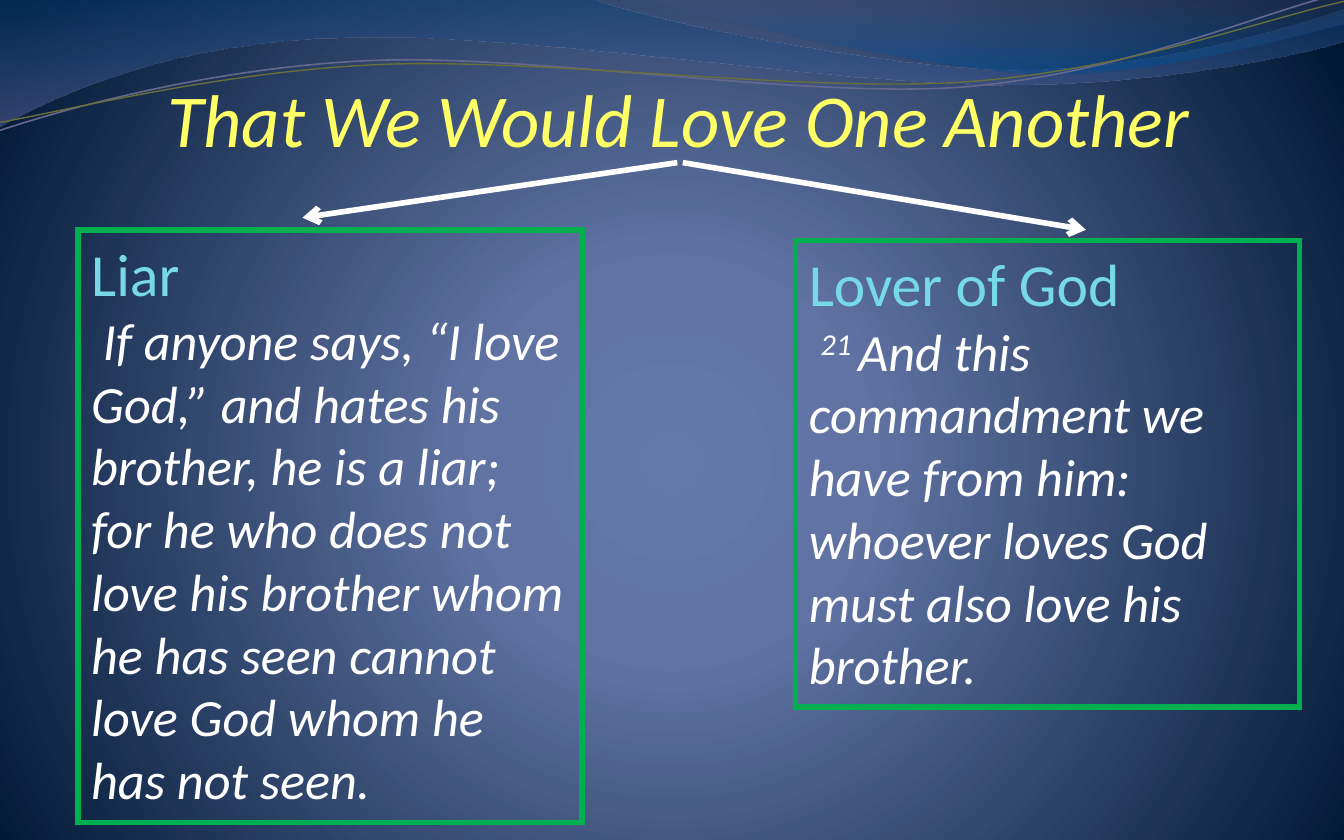
from math import cos, radians, sin

from pptx import Presentation
from pptx.dml.color import RGBColor
from pptx.enum.shapes import MSO_CONNECTOR, MSO_SHAPE
from pptx.enum.text import MSO_ANCHOR, MSO_AUTO_SIZE, PP_ALIGN
from pptx.oxml import parse_xml
from pptx.oxml.ns import nsdecls, qn
from pptx.util import Inches, Pt

RECTANGLE = MSO_SHAPE.RECTANGLE
STRAIGHT = MSO_CONNECTOR.STRAIGHT
LEFT, CENTER = PP_ALIGN.LEFT, PP_ALIGN.CENTER
TOP, BOTTOM = MSO_ANCHOR.TOP, MSO_ANCHOR.BOTTOM
GROW = MSO_AUTO_SIZE.SHAPE_TO_FIT_TEXT

COLORS = {
    "title": "FFFF66", "heading": "77D9E8", "white": "FFFFFF", "frame": "00B050",
    "glow": "6379AE", "mid": "6073A3", "night": "001733",
    "wave_blue": "074278", "wave_violet": "5C629D",
    "crest_violet": "4F537B", "crest_blue": "004F98",
    "violet_line": "65688D", "olive_line": "686F3A",
}
RADIAL = '<a:path path="circle"><a:fillToRect l="10000" t="110000" r="10000" b="100000"/></a:path>'
DOWNWARD = '<a:lin ang="5400000" scaled="0"/>'
TILT = 2.7


def turn(point, center, degrees):
    """Turn a point clockwise around a center."""
    dx, dy = point[0] - center[0], point[1] - center[1]
    c, s = cos(radians(degrees)), sin(radians(degrees))
    return center[0] + dx * c - dy * s, center[1] + dx * s + dy * c


class SlideWriter:
    font = "Calibri"

    def __init__(self, page):
        self.page = page

    def color(self, name):
        return RGBColor.from_string(COLORS[name])

    def gradient(self, fill, owner, stops, direction):
        """Stops are (position %, colour name, opacity %)."""
        fill.gradient()
        stop_xml = ""
        for pos, name, opacity in stops:
            alpha = f'<a:alpha val="{opacity * 1000}"/>' if opacity < 100 else ""
            stop_xml += (f'<a:gs pos="{pos * 1000}"><a:srgbClr val="{COLORS[name]}">'
                         f'{alpha}</a:srgbClr></a:gs>')
        old = owner.find(".//" + qn("a:gradFill"))
        old.getparent().replace(old, parse_xml(
            f'<a:gradFill {nsdecls("a")} rotWithShape="1">'
            f'<a:gsLst>{stop_xml}</a:gsLst>{direction}</a:gradFill>'))

    def background(self, stops):
        self.gradient(self.page.background.fill, self.page.element, stops, RADIAL)

    def stroke(self, line, name, width):
        line.color.rgb = self.color(name)
        line.width = Pt(width)

    def outline(self, start, segments, closed):
        """A segment has one point for a line, three for a cubic curve."""
        points = [(Inches(x), Inches(y)) for segment in segments for x, y in segment]
        builder = self.page.shapes.build_freeform(Inches(start[0]), Inches(start[1]))
        builder.add_line_segments(points, close=closed)
        shape = builder.convert_to_shape()
        shape.shadow.inherit = False
        # Join each three line ends into one curve
        steps = iter(shape.element.findall(".//" + qn("a:lnTo")))
        for segment in segments:
            ends = [next(steps) for _ in segment]
            if len(ends) == 3:
                curve = parse_xml(f'<a:cubicBezTo {nsdecls("a")}/>')
                ends[0].addprevious(curve)
                for end in ends:
                    curve.append(end[0])
                    end.getparent().remove(end)
        return shape

    def wave(self, start, segments, stops):
        shape = self.outline(start, segments, True)
        self.gradient(shape.fill, shape.element, stops, DOWNWARD)
        shape.line.fill.background()

    def ripple(self, center, start, segments, name, width):
        """An open curve, laid level and then tilted into place."""
        level = [[turn(point, center, TILT) for point in segment] for segment in segments]
        shape = self.outline(turn(start, center, TILT), level, False)
        shape.rotation = 360 - TILT
        shape.fill.background()
        self.stroke(shape.line, name, width)

    def span(self, para, text, size, name, italic=False, baseline=None):
        span = para.add_run()
        span.text = text
        span.font.name = self.font
        span.font.size = Pt(size)
        span.font.italic = italic
        span.font.color.rgb = self.color(name)
        if baseline:
            span.font._element.set("baseline", str(baseline * 1000))

    def title(self, left, top, width, height, text):
        box = self.page.shapes.add_textbox(*map(Inches, (left, top, width, height)))
        frame = box.text_frame
        frame.word_wrap = True
        frame.vertical_anchor = BOTTOM
        frame.margin_left = frame.margin_right = frame.margin_bottom = 0
        para = frame.paragraphs[0]
        para.alignment = CENTER
        self.span(para, text, 40, "title", italic=True)

    def verse_box(self, left, top, width, height, heading, verse):
        """Verse is a list of (text, baseline %)."""
        box = self.page.shapes.add_shape(RECTANGLE, *map(Inches, (left, top, width, height)))
        box.shadow.inherit = False
        box.fill.background()
        self.stroke(box.line, "frame", 3)
        box.line._get_or_add_ln().append(
            parse_xml(f'<a:miter {nsdecls("a")} lim="800000"/>'))
        frame = box.text_frame
        frame.word_wrap = True
        frame.auto_size = GROW
        frame.vertical_anchor = TOP
        para = frame.paragraphs[0]
        para.alignment = LEFT
        self.span(para, heading, 32, "heading")
        para.add_line_break()
        for text, baseline in verse:
            self.span(para, text, 28, "white", italic=True, baseline=baseline)

    def arrow(self, start, end):
        arrow = self.page.shapes.add_connector(STRAIGHT, *map(Inches, (*start, *end)))
        self.stroke(arrow.line, "white", 3)
        arrow.line._get_or_add_ln().append(
            parse_xml(f'<a:tailEnd {nsdecls("a")} type="arrow"/>'))
        arrow.element.spPr.append(parse_xml(f'<a:effectLst {nsdecls("a")}/>'))


def main():
    deck = Presentation()
    deck.slide_width, deck.slide_height = Inches(10), Inches(6.25)
    writer = SlideWriter(deck.slides.add_slide(deck.slide_layouts[6]))

    # Background and waves
    writer.background([(0, "glow", 100), (25, "mid", 100), (100, "night", 100)])
    writer.wave((0, 0), [
        [(4.4, -0.01)],
        [(4.76, 0.14), (6.64, 0.52), (7.58, 0.52)],
        [(8.53, 0.52), (9.58, 0.21), (10, 0.07)],
        [(10.01, 0.3)],
        [(9.83, 0.37), (8.7, 0.63), (7.46, 0.63)],
        [(6.22, 0.63), (3.82, 0.23), (2.57, 0.28)],
        [(1.29, 0.3), (0.46, 0.69), (-0.01, 0.94)],
    ], [(0, "wave_blue", 45), (100, "wave_violet", 55)])
    writer.wave((4.79, -0.01), [
        [(5.09, 0.09), (6.82, 0.51), (7.69, 0.54)],
        [(8.56, 0.58), (9.61, 0.27), (10, 0.18)],
        [(10, 0)],
    ], [(0, "crest_violet", 30), (80, "crest_blue", 45)])
    writer.ripple((4.99, 0.48), (0, 0.97), [
        [(0.48, 0.81), (1.58, 0.5), (2.77, 0.45)],
        [(3.95, 0.4), (5.92, 0.73), (7.13, 0.65)],
        [(8.33, 0.56), (9.39, 0.09), (9.98, -0.05)],
    ], "violet_line", 0.85)
    writer.ripple((5, 0.49), (0, 0.91), [
        [(0.47, 0.83), (1.64, 0.53), (2.83, 0.48)],
        [(4.03, 0.43), (5.97, 0.69), (7.17, 0.61)],
        [(8.36, 0.53), (9.41, 0.14), (10, 0.01)],
    ], "olive_line", 0.75)

    # Right verse
    writer.verse_box(5.92, 1.79, 3.75, 3.47, "Lover of God", [
        (" ", None), ("21 ", 30),
        ("And this commandment we have from him: "
         "whoever loves God must also love his brother.", None)])

    # Title with an arrow to each verse
    writer.title(0.42, 0.38, 9.25, 0.83, "That We Would Love One Another")
    writer.arrow((5.04, 1.21), (2.25, 1.62))
    writer.arrow((5.08, 1.21), (8.08, 1.71))

    # Left verse
    writer.verse_box(0.58, 1.71, 3.75, 4.41, "Liar", [
        (" If anyone says, “I love God,” and hates his brother, he is a liar; "
         "for he who does not love his brother whom he has seen "
         "cannot love God whom he has not seen.", None)])

    deck.save("out.pptx")


if __name__ == "__main__":
    main()
